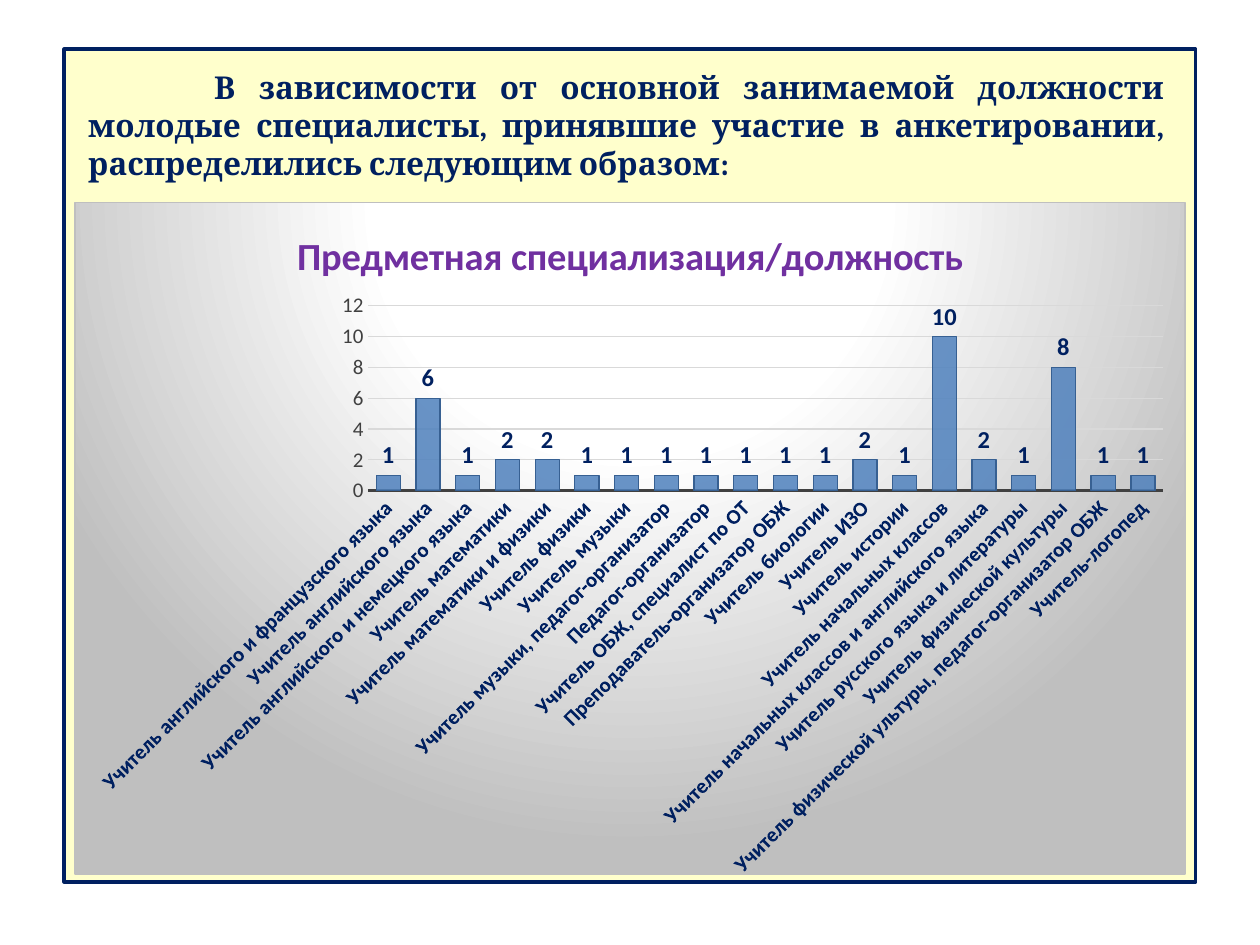
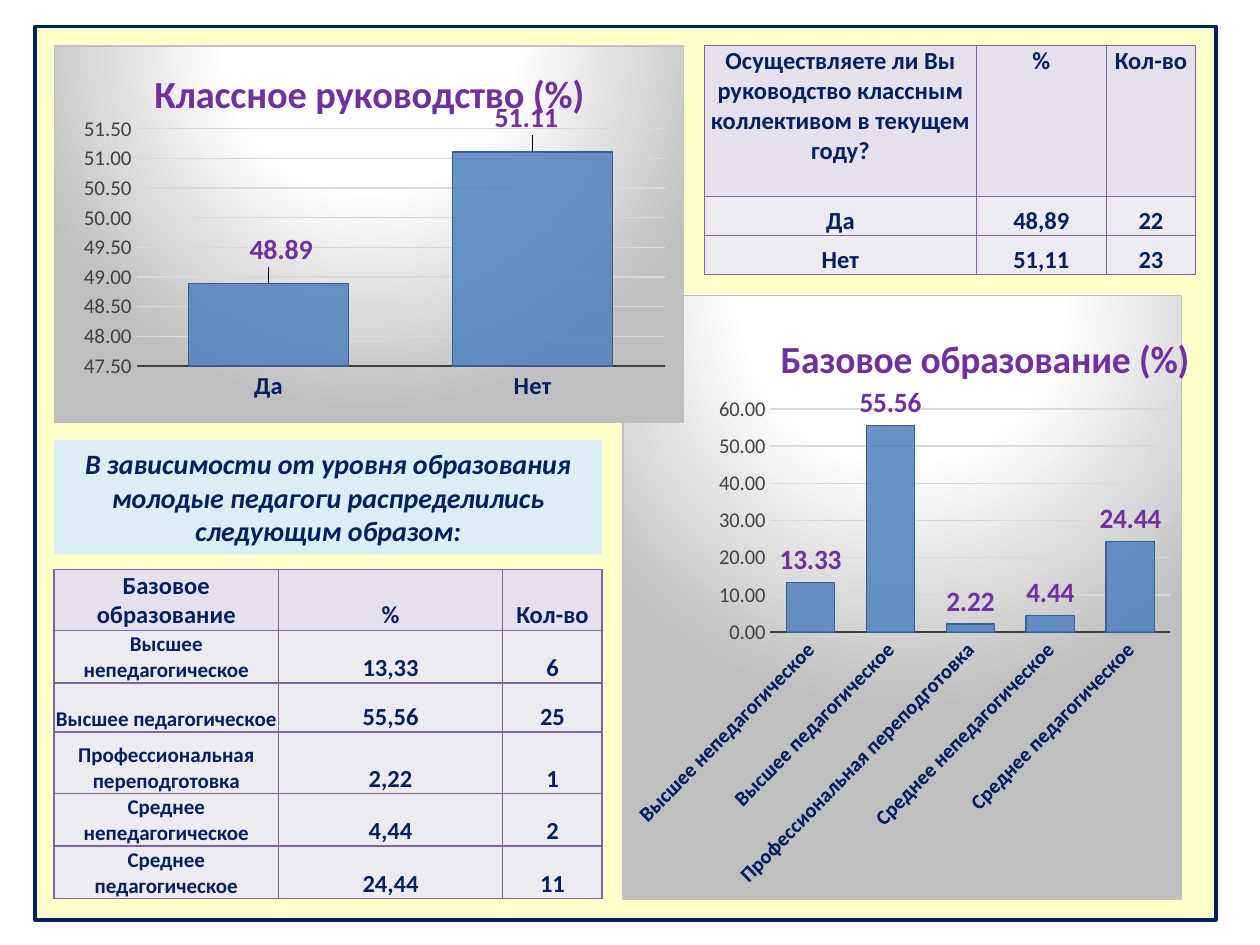
from lxml.etree import SubElement
from pptx import Presentation
from pptx.chart.data import CategoryChartData
from pptx.dml.color import RGBColor
from pptx.enum.chart import XL_CHART_TYPE, XL_LABEL_POSITION, XL_TICK_MARK
from pptx.enum.shapes import MSO_SHAPE
from pptx.enum.text import MSO_ANCHOR, PP_ALIGN
from pptx.oxml import parse_xml
from pptx.oxml.ns import nsdecls, qn
from pptx.util import Inches, Pt

NAVY = RGBColor(0x00, 0x20, 0x60)
PURPLE = RGBColor(0x70, 0x30, 0xA0)
CREAM = RGBColor(0xFF, 0xFF, 0xCC)
PALE_BLUE = RGBColor(0xDB, 0xEE, 0xF4)
BAR = RGBColor(0x4F, 0x81, 0xBD)
BAR_EDGE = RGBColor(0x37, 0x60, 0x92)
BLACK = RGBColor(0x00, 0x00, 0x00)
DARK_GREY = RGBColor(0x40, 0x40, 0x40)
LIGHT_GREY = RGBColor(0xD9, 0xD9, 0xD9)
SILVER = RGBColor(0xBF, 0xBF, 0xBF)
WHITE = RGBColor(0xFF, 0xFF, 0xFF)
TABLE_EDGE = RGBColor(0x80, 0x64, 0xA2)
TABLE_HEAD = RGBColor(0xE6, 0xE0, 0xEC)
TABLE_BODY = RGBColor(0xED, 0xEA, 0xF0)

CELL = Inches(0.1)
COLUMNS, ROWS = 100, 75

SPECIALTIES = {
    "Учитель английского и французского языка": 1,
    "Учитель английского языка": 6,
    "Учитель английского и немецкого языка": 1,
    "Учитель математики": 2,
    "Учитель математики и физики": 2,
    "Учитель физики": 1,
    "Учитель музыки": 1,
    "Учитель музыки, педагог-организатор": 1,
    "Педагог-организатор": 1,
    "Учитель ОБЖ, специалист по ОТ": 1,
    "Преподаватель-организатор ОБЖ": 1,
    "Учитель биологии": 1,
    "Учитель ИЗО": 2,
    "Учитель истории": 1,
    "Учитель начальных классов": 10,
    "Учитель начальных классов и английского языка": 2,
    "Учитель русского языка и литературы": 1,
    "Учитель физической культуры": 8,
    "Учитель физической ультуры, педагог-организатор ОБЖ": 1,
    "Учитель-логопед": 1,
}
LEADERSHIP = {"Да": (48.89, 22), "Нет": (51.11, 23)}
EDUCATION = {
    "Высшее непедагогическое": (13.33, 6),
    "Высшее педагогическое": (55.56, 25),
    "Профессиональная переподготовка": (2.22, 1),
    "Среднее непедагогическое": (4.44, 2),
    "Среднее педагогическое": (24.44, 11),
}


def emu(box):
    return [round(v * CELL) for v in box]


def inside(box, left, top, width, height):
    return box[0] + left, box[1] + top, width, height


def style(font, size, color, bold=True, italic=None, name="Calibri"):
    font.name, font.size, font.bold, font.italic = name, Pt(size), bold, italic
    font.color.rgb = color


def add_rect(s, box, fill, edge=None):
    sp = s.shapes.add_shape(MSO_SHAPE.RECTANGLE, *emu(box))
    sp.shadow.inherit = False
    sp.fill.solid()
    sp.fill.fore_color.rgb = fill
    if edge:
        sp.line.color.rgb = edge
        sp.line.width = Pt(2)
    else:
        sp.line.fill.background()
    return sp


def set_layout(parent, index, **values):
    for old in parent.findall(qn("c:layout")):
        parent.remove(old)
    layout = parse_xml(f"<c:layout {nsdecls('c')}><c:manualLayout/></c:layout>")
    for tag, value in values.items():
        SubElement(layout[0], qn(f"c:{tag}")).set("val", str(value))
    parent.insert(index, layout)


def fill_chart_area(chart):
    stops = "".join(
        f'<a:gs pos="{pos}"><a:srgbClr val="{color}"/></a:gs>'
        for pos, color in ((0, WHITE), (39000, WHITE), (100000, SILVER)))
    area = parse_xml(
        f'<c:spPr {nsdecls("c", "a")}><a:gradFill><a:gsLst>{stops}</a:gsLst>'
        '<a:path path="circle"><a:fillToRect l="50000" t="-80000" r="50000" b="180000"/>'
        f'</a:path></a:gradFill><a:ln w="9525"><a:solidFill><a:srgbClr val="{SILVER}"/>'
        '</a:solidFill></a:ln></c:spPr>')
    chart.element.find(qn("c:chart")).addnext(area)


def format_axes(chart, scale, number_format, size, tilted):
    cat, val = chart.category_axis, chart.value_axis
    for axis in (cat, val):
        axis.major_tick_mark = axis.minor_tick_mark = XL_TICK_MARK.NONE
    style(cat.tick_labels.font, size, NAVY)
    cat.format.line.color.rgb = DARK_GREY
    cat.format.line.width = Pt(1.5)
    if tilted:
        body = cat._element.find(qn("c:txPr")).find(qn("a:bodyPr"))
        body.set("rot", "-2700000")
        body.set("vert", "horz")
    val.minimum_scale, val.maximum_scale, val.major_unit = scale
    style(val.tick_labels.font, 12, DARK_GREY, bold=False)
    val.tick_labels.number_format = number_format
    val.tick_labels.number_format_is_linked = False
    val.format.line.fill.background()
    val.major_gridlines.format.line.color.rgb = LIGHT_GREY
    val.major_gridlines.format.line.width = Pt(0.75)


def format_bars(plot, number_format, size, color):
    plot.gap_width = 65
    plot.vary_by_categories = False
    bars = plot.series[0]
    bars.invert_if_negative = False
    bars.format.fill.solid()
    bars.format.fill.fore_color.rgb = BAR
    paint = next(bars._element.iter(qn("a:srgbClr")))
    SubElement(paint, qn("a:alpha")).set("val", "85000")
    bars.format.line.color.rgb = BAR_EDGE
    bars.format.line.width = Pt(0.75)
    labels = bars.data_labels
    labels.show_value = True
    labels.position = XL_LABEL_POSITION.OUTSIDE_END
    labels.number_format = number_format
    labels.number_format_is_linked = False
    style(labels.font, size, color)


def add_bar_chart(s, box, title, data, scale, number_format="0.00", cat_size=12,
                  label_size=16, label_color=PURPLE, tilted=True):
    cd = CategoryChartData()
    cd.categories = list(data)
    cd.add_series("Series 1", list(data.values()))
    chart = s.shapes.add_chart(XL_CHART_TYPE.COLUMN_CLUSTERED, *emu(box), cd).chart
    style(chart.font, 10, BLACK, bold=False)
    chart.has_legend = False
    p = chart.chart_title.text_frame.paragraphs[0]
    p.text = title
    style(p.runs[0].font, 22, PURPLE)
    fill_chart_area(chart)
    format_axes(chart, scale, number_format, cat_size, tilted)
    format_bars(chart.plots[0], number_format, label_size, label_color)
    return chart


def shift_labels(chart, offsets):
    points = chart.plots[0].series[0].points
    for i in range(len(offsets)):
        label = points[i].data_label
        label.position = XL_LABEL_POSITION.OUTSIDE_END
        style(label.font, 16, PURPLE)
    for node, (dx, dy) in zip(list(chart.element.iter(qn("c:dLbl"))), offsets):
        set_layout(node, 1, x=dx, y=dy)


def add_borders(cell):
    tc_pr = cell._tc.get_or_add_tcPr()
    for side in ("lnL", "lnR", "lnT", "lnB"):
        ln = SubElement(tc_pr, qn(f"a:{side}"), w="12700")
        SubElement(SubElement(ln, qn("a:solidFill")), qn("a:srgbClr"), val=str(TABLE_EDGE))


def add_survey_table(s, box, question, answers, widths, heights,
                     head_anchor=MSO_ANCHOR.BOTTOM, answer_size=14):
    rows = [(question, "%", "Кол-во")]
    rows += [(name, f"{share:.2f}".replace(".", ","), str(count))
             for name, (share, count) in answers.items()]
    table = s.shapes.add_table(len(rows), 3, *emu(box)).table
    table.horz_banding = False
    for column, width in zip(table.columns, emu(widths)):
        column.width = width
    for row, height in zip(table.rows, emu(heights)):
        row.height = height
    for i, texts in enumerate(rows):
        for j, text in enumerate(texts):
            cell = table.cell(i, j)
            add_borders(cell)
            cell.fill.solid()
            cell.fill.fore_color.rgb = TABLE_BODY if i else TABLE_HEAD
            cell.margin_left = cell.margin_right = cell.margin_top = Inches(0.01)
            cell.margin_bottom = 0
            cell.vertical_anchor = MSO_ANCHOR.BOTTOM if i else head_anchor
            p = cell.text_frame.paragraphs[0]
            p.text = text
            p.alignment = PP_ALIGN.CENTER
            style(p.runs[0].font, answer_size if i and not j else 14, NAVY)


def add_heading(s, box, text):
    title = s.shapes.title
    title.left, title.top, title.width, title.height = emu(box)
    s.shapes.element.append(title.element)
    tf = title.text_frame
    tf.text = text
    tf.vertical_anchor = MSO_ANCHOR.TOP
    p = tf.paragraphs[0]
    p.alignment = PP_ALIGN.JUSTIFY
    p._p.get_or_add_pPr().set("indent", str(Inches(1)))
    style(p.runs[0].font, 18, NAVY, name="Cambria")


def add_caption(s, box, text):
    tf = add_rect(s, box, PALE_BLUE).text_frame
    tf.word_wrap = True
    tf.text = text
    p = tf.paragraphs[0]
    p.alignment = PP_ALIGN.CENTER
    style(p.runs[0].font, 16, NAVY, italic=True)


def shares_of(answers):
    return {name: share for name, (share, count) in answers.items()}


def specialty_slide(prs, panel):
    s = prs.slides.add_slide(prs.slide_layouts[5])
    add_rect(s, panel, CREAM, NAVY)
    add_bar_chart(s, inside(panel, 0.8, 12.1, 88.2, 53.6), "Предметная специализация/должность",
                  SPECIALTIES, (0, 12, 2), "General", label_size=14, label_color=NAVY)
    add_heading(s, inside(panel, 0.9, 1, 87.4, 10.1),
                "В зависимости от основной занимаемой должности молодые специалисты, "
                "принявшие участие в анкетировании, распределились следующим образом:")


def leadership_and_education_slide(prs, panel):
    s = prs.slides.add_slide(prs.slide_layouts[6])
    add_rect(s, panel, CREAM, NAVY)
    add_survey_table(s, inside(panel, 53.1, 1.5, 39, 18.1),
                     "Осуществляете ли Вы руководство классным коллективом в текущем году?",
                     LEADERSHIP, (21.6, 10.3, 7.1), (12, 3.1, 3.1), MSO_ANCHOR.TOP)
    add_survey_table(s, inside(panel, 1.5, 43.1, 43.5, 25.8), "Базовое образование",
                     EDUCATION, (17.8, 17.8, 7.9), (3.5, 3.9, 3.9, 4.9, 3.9, 3.9),
                     answer_size=12)
    chart = add_bar_chart(s, inside(panel, 46.6, 21.3, 45.5, 48), "Базовое образование (%)",
                          shares_of(EDUCATION), (0, 60, 10))
    set_layout(next(chart.element.iter(qn("c:title"))), 1,
               xMode="edge", yMode="edge", x=0.27, y=0.05)
    add_caption(s, inside(panel, 1.5, 32.8, 43.5, 9.1),
                "В зависимости от уровня образования молодые педагоги "
                "распределились следующим образом:")
    chart = add_bar_chart(s, inside(panel, 1.5, 1.5, 50, 30), "Классное руководство (%)",
                          shares_of(LEADERSHIP), (47.5, 51.5, 0.5), cat_size=14, tilted=False)
    set_layout(next(chart.element.iter(qn("c:plotArea"))), 0, layoutTarget="inner",
               xMode="edge", yMode="edge", x=0.13, y=0.22, w=0.84, h=0.63)
    shift_labels(chart, ((0.02, -0.03), (-0.01, -0.03)))


def main():
    prs = Presentation()
    prs.slide_width, prs.slide_height = COLUMNS * CELL, ROWS * CELL
    specialty_slide(prs, (5.1, 3.9, 89.8, 66.1))
    leadership_and_education_slide(prs, (2.8, 2.1, 93.7, 70.9))
    prs.save("out.pptx")


if __name__ == "__main__":
    main()
